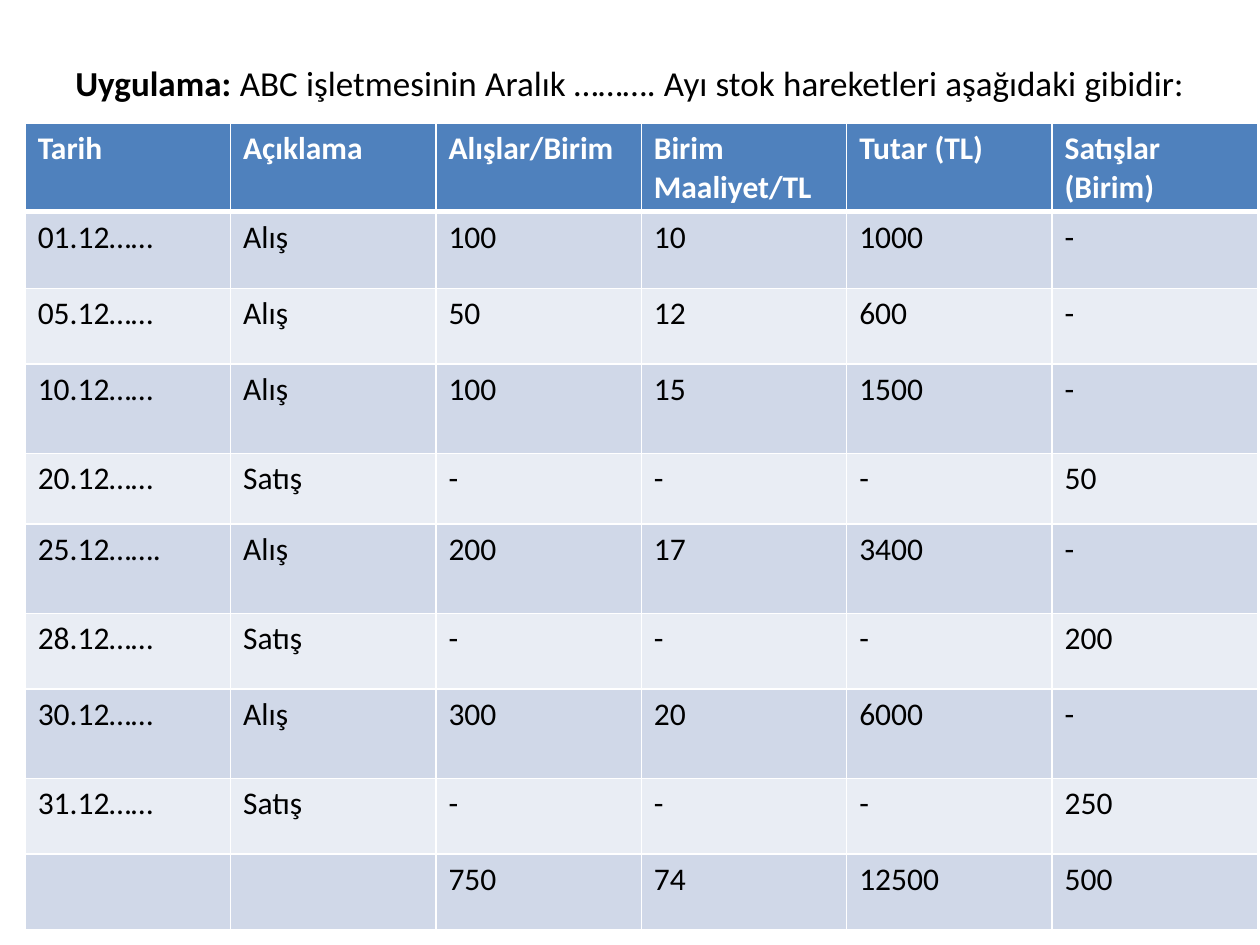
from lxml import etree
from pptx import Presentation
from pptx.dml.color import RGBColor
from pptx.enum.text import PP_ALIGN
from pptx.oxml.ns import qn
from pptx.util import Inches, Pt

JUSTIFY = PP_ALIGN.JUSTIFY
FONT = "Calibri"
COLORS = {
    "text": "000000",
    "white": "FFFFFF",
    "header": "4F81BD",
    "odd": "D0D8E8",
    "even": "E9EDF4",
}
HEADER = ["Tarih", "Açıklama", "Alışlar/Birim", "Birim Maaliyet/TL",
          "Tutar (TL)", "Satışlar  (Birim)"]
MOVEMENTS = [
    ["01.12……", "Alış", "100", "10", "1000", "-"],
    ["05.12……", "Alış", "50", "12", "600", "-"],
    ["10.12……", "Alış", "100", "15", "1500", "-"],
    ["20.12……", "Satış", "-", "-", "-", "50"],
    ["25.12…….", "Alış", "200", "17", "3400", "-"],
    ["28.12……", "Satış", "-", "-", "-", "200"],
    ["30.12……", "Alış", "300", "20", "6000", "-"],
    ["31.12……", "Satış", "-", "-", "-", "250"],
]
TOTALS = ["", "", "750", "74", "12500", "500"]
ROW_HEIGHTS = [0.69, 0.61, 0.6, 0.71, 0.56, 0.71, 0.6, 0.71, 0.6, 0.6]
COL_WIDTH = 1.63


class SlideBuilder:
    def __init__(self, slide):
        self.s = slide

    def style(self, font, size, color, bold=False):
        font.name = FONT
        font.size = Pt(size)
        font.bold = bold
        font.color.rgb = RGBColor.from_string(COLORS[color])

    def text(self, x, y, w, h, runs, size):
        sp = self.s.shapes.add_textbox(Inches(x), Inches(y), Inches(w), Inches(h))
        tf = sp.text_frame
        tf.word_wrap = True
        p = tf.paragraphs[0]
        p.alignment = JUSTIFY
        p.space_before = Pt(size * 0.2)
        # Hanging indent
        pPr = p._p.get_or_add_pPr()
        pPr.set("marL", str(Inches(0.38)))
        pPr.set("indent", str(Inches(-0.38)))
        for content, bold in runs:
            r = p.add_run()
            r.text = content
            self.style(r.font, size, "text", bold)

    def border(self, cell, bottom):
        tcPr = cell._tc.get_or_add_tcPr()
        sides = [("a:lnL", 1), ("a:lnR", 1), ("a:lnT", 1), ("a:lnB", bottom)]
        for i, (tag, width) in enumerate(sides):
            ln = etree.Element(qn(tag), w=str(Pt(width)))
            fill = etree.SubElement(ln, qn("a:solidFill"))
            etree.SubElement(fill, qn("a:srgbClr"), val=COLORS["white"])
            tcPr.insert(i, ln)

    def table(self, x, y, rows, heights, col_width, size):
        cols = len(rows[0])
        table = self.s.shapes.add_table(
            len(rows), cols, Inches(x), Inches(y),
            Inches(col_width * cols), Inches(sum(heights))).table
        for column in table.columns:
            column.width = Inches(col_width)
        for i, (values, height) in enumerate(zip(rows, heights)):
            table.rows[i].height = Inches(height)
            is_header = i == 0
            fill = "header" if is_header else "odd" if i % 2 else "even"
            for j, value in enumerate(values):
                cell = table.cell(i, j)
                cell.text = value
                cell.fill.solid()
                cell.fill.fore_color.rgb = RGBColor.from_string(COLORS[fill])
                for r in cell.text_frame.paragraphs[0].runs:
                    self.style(r.font, size, "white" if is_header else "text", is_header)
                self.border(cell, 3 if is_header else 1)


def main():
    prs = Presentation()
    prs.slide_width, prs.slide_height = Inches(10), Inches(7.5)
    builder = SlideBuilder(prs.slides.add_slide(prs.slide_layouts[6]))

    # Exercise heading
    builder.text(0.5, 0.44, 9, 6.26, [
        ("Uygulama: ", True),
        ("ABC işletmesinin Aralık ………. Ayı stok hareketleri aşağıdaki gibidir: ", False),
    ], 20)

    # Stock movements with totals
    builder.table(0.2, 0.98, [HEADER, *MOVEMENTS, TOTALS], ROW_HEIGHTS, COL_WIDTH, 18)

    prs.save("out.pptx")


if __name__ == "__main__":
    main()
